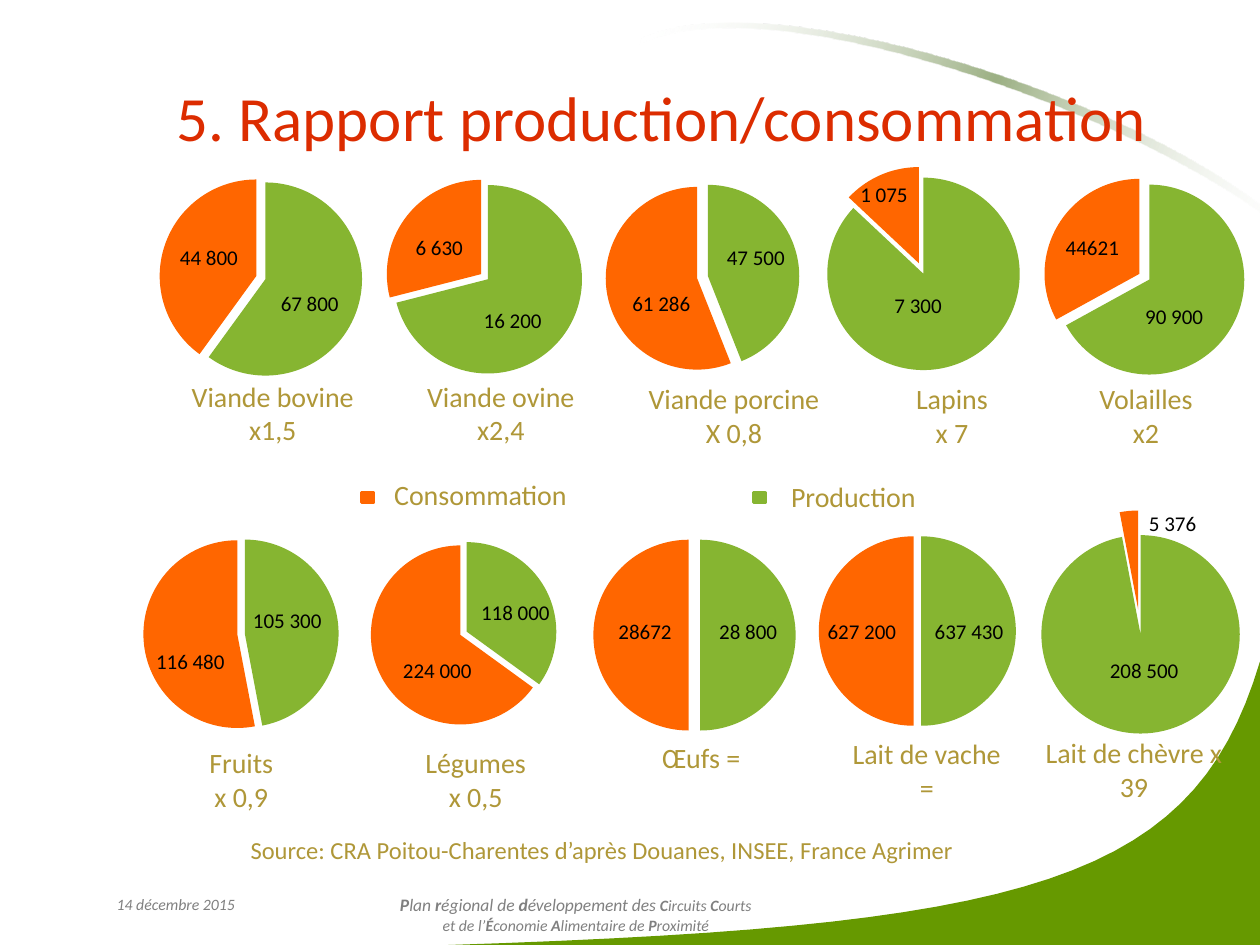
import pptx
import pptx.chart.data
import pptx.dml.color
import pptx.enum.chart
import pptx.enum.shapes
import pptx.enum.text
import pptx.oxml
import pptx.oxml.ns
import pptx.util
from pptx.util import Inches
from dataclasses import dataclass


@dataclass(frozen=True)
class Theme:
    font: str = "Calibri"
    title: str = "DC2C00"
    caption: str = "AF9738"
    value: str = "000000"
    footer: str = "808080"
    production: str = "86B531"
    consumption: str = "FF6600"
    corner: str = "669900"
    swoosh: str = "9CB084"
    title_size: int = 36
    caption_size: int = 16
    source_size: int = 14
    value_size: int = 12
    footer_size: int = 10
    small_size: int = 9


theme = Theme()
color = pptx.dml.color.RGBColor.from_string
CENTER = pptx.enum.text.PP_ALIGN.CENTER
LEFT = pptx.enum.text.PP_ALIGN.LEFT
NAMESPACES = pptx.oxml.ns.nsdecls("a", "c")

deck = pptx.Presentation()
deck.slide_width, deck.slide_height = Inches(10), Inches(7.5)
page = deck.slides.add_slide(deck.slide_layouts[5])
shapes = page.shapes


def write(text, at=None, box=None, size=theme.caption_size, ink=theme.caption, align=LEFT, italic=False):
    if box is None:
        box = shapes.add_textbox(*[Inches(length) for length in at])
    frame = box.text_frame
    frame.word_wrap = True
    for number, line in enumerate(text.split("\n")):
        para = frame.paragraphs[0] if number == 0 else frame.add_paragraph()
        para.alignment = align
        for position, words in enumerate(line.split("|")):
            if words:
                span = para.add_run()
                span.text = words
                span.font.name = theme.font
                span.font.size = pptx.util.Pt(size)
                span.font.color.rgb = color(ink)
                span.font.italic = italic
                span.font.bold = position % 2 == 1
    return box


def curve(start, first, second, end, steps=30):
    points = []
    for step in range(steps + 1):
        t = step / steps
        weights = ((1 - t) ** 3, 3 * t * (1 - t) ** 2, 3 * t * t * (1 - t), t ** 3)
        points.append(tuple(Inches(sum(weight * point[axis] for weight, point in zip(weights, (start, first, second, end))))
                            for axis in (0, 1)))
    return points


corner_edge = curve((3.56, 7.5), (8.2, 7.35), (9.48, 7), (10, 5.25))
upper_edge = curve((5.1, 0.3), (6.2, -0.2), (9.48, 0.93), (10.36, 1.95))
lower_edge = curve((10.35, 1.97), (9.46, 1.07), (6.18, -0.19), (5.08, 0.35))
outlines = []
for points in (corner_edge + [(Inches(10), Inches(7.5))], upper_edge + lower_edge):
    builder = shapes.build_freeform(*points[0], scale=1.0)
    builder.add_line_segments(points[1:], close=True)
    outline = builder.convert_to_shape()
    outline.shadow.inherit = False
    outline.line.fill.background()
    outline.fill.solid()
    outline.fill.fore_color.rgb = color(theme.corner)
    outlines.append(outline)

swoosh = outlines[1].element.spPr
gradient = pptx.oxml.parse_xml(
    f'<a:gradFill {NAMESPACES} rotWithShape="1"><a:gsLst>'
    '<a:gs pos="0"><a:srgbClr val="FFFFFF"><a:alpha val="0"/></a:srgbClr></a:gs>'
    f'<a:gs pos="50000"><a:srgbClr val="{theme.swoosh}"/></a:gs>'
    '<a:gs pos="100000"><a:srgbClr val="FFFFFF"><a:alpha val="0"/></a:srgbClr></a:gs>'
    '</a:gsLst><a:lin ang="1308000" scaled="0"/></a:gradFill>')
swoosh.replace(swoosh.find(pptx.oxml.ns.qn("a:solidFill")), gradient)

write("14 décembre 2015", at=(0.78, 7.05, 1.23, 0.4), size=theme.small_size, ink=theme.footer, align=CENTER, italic=True)
footer = write("|P|lan |r|égional de |d|éveloppement des |C|ircuits |C|ourts\n"
               "et de l’|É|conomie |A|limentaire de |P|roximité",
               at=(2.17, 7.05, 4.8, 0.4), size=theme.footer_size, ink=theme.footer, align=CENTER, italic=True)
first_line, second_line = footer.text_frame.paragraphs
for span in list(first_line.runs[6:]) + list(second_line.runs):
    span.font.size = pptx.util.Pt(theme.small_size)

title = shapes.title
title.left, title.top, title.width, title.height = [Inches(length) for length in (1.3, 0.3, 8.45, 1.25)]
write("5. Rapport production/consommation", box=title, size=theme.title_size, ink=theme.title)
title.text_frame.vertical_anchor = pptx.enum.text.MSO_ANCHOR.MIDDLE
title.element.getparent().append(title.element)

pies = [
    ((1.18, 1.39, 1.89, 1.65), (0.034, 0.005, 0.875, 0.976), 60, 5, None),
    ((3.07, 1.39, 1.72, 1.66), (0, 0.018, 0.87, 0.911), 71, None, 9),
    ((4.76, 1.32, 1.73, 1.65), (0.001, 0.068, 0.942, 0.932), 44, 6, None),
    ((8.11, 1.34, 1.85, 1.81), (0.094, 0.031, 0.864, 0.885), 67, 6, None),
    ((6.44, 1.22, 1.75, 1.76), (0.051, 0.059, 0.873, 0.871), 87, None, 12),
    ((4.32, 4.16, 2.28, 1.79), (0.167, 0.044, 0.712, 0.897), 50, 6, None),
    ((6.31, 3.95, 2.13, 2.07), (0.072, 0.134, 0.768, 0.756), 50, 4, None),
    ((7.8, 3.91, 2.36, 2.11), (0.108, 0.067, 0.846, 0.933), 97, 25, 0),
    ((2.74, 4.14, 1.83, 1.8), (0.11, 0.105, 0.78, 0.79), 35, None, 8),
    ((0.9, 4.06, 2.29, 1.81), (0.104, 0.099, 0.677, 0.875), 47, 4, None),
]
for at, plot_area, production, series_gap, production_gap in pies:
    data = pptx.chart.data.CategoryChartData()
    data.categories = ["1", "2"]
    data.add_series("Series 1", (production, 100 - production))
    chart = shapes.add_chart(pptx.enum.chart.XL_CHART_TYPE.PIE, *[Inches(length) for length in at], data).chart
    chart.has_legend = False
    chart.has_title = False
    chart.font.name = theme.font
    chart.font.size = pptx.util.Pt(theme.footer_size)
    chart.font.color.rgb = color(theme.value)
    plot = chart.plots[0]
    plot.vary_by_categories = True
    for number, ink in enumerate((theme.production, theme.consumption)):
        point = plot.series[0].points[number]
        point.format.fill.solid()
        point.format.fill.fore_color.rgb = color(ink)
        point.format.line.fill.background()
    area = chart.element.xpath(".//c:plotArea")[0]
    for layout in area.xpath("./c:layout"):
        area.remove(layout)
    sides = "".join(f'<c:{side} val="{part}"/>' for side, part in zip("xywh", plot_area))
    area.insert(0, pptx.oxml.parse_xml(
        f'<c:layout {NAMESPACES}><c:manualLayout><c:layoutTarget val="inner"/>'
        f'<c:xMode val="edge"/><c:yMode val="edge"/>{sides}</c:manualLayout></c:layout>'))
    for gap, follower in ((series_gap, ".//c:ser/c:dPt"), (production_gap, ".//c:dPt/c:spPr")):
        if gap is not None:
            explosion = pptx.oxml.parse_xml(f'<c:explosion {NAMESPACES} val="{gap}"/>')
            area.xpath(follower)[0].addprevious(explosion)

captions = [
    ("Viande bovine x1,5", 1.26, 2.96), ("Viande ovine\nx2,4", 3.07, 2.96),
    ("Viande porcine\nX 0,8", 4.92, 2.98), ("Lapins\nx 7", 6.65, 2.98), ("Volailles\nx2", 8.19, 2.98),
    ("Fruits\nx 0,9", 1.01, 5.87), ("Légumes\nx 0,5", 2.87, 5.87), ("Œufs =", 4.66, 5.83),
    ("Lait de vache\n=", 6.45, 5.8), ("Lait de chèvre x 39", 8.18, 5.79),
]
for text, left, top in captions:
    width = 1.64 if "chèvre" in text else 1.81
    height = 0.37 if "Œufs" in text else 0.64
    write(text, at=(left, top, width, height), align=CENTER)

values = [
    ("44 800", 1.33, 1.89), ("67 800", 2.13, 2.26), ("16 200", 3.74, 2.39), ("6 630", 3.2, 1.81),
    ("47 500", 5.67, 1.89), ("61 286", 4.92, 2.26), ("7 300", 7, 2.27), ("1 075", 6.73, 1.39),
    ("44621", 8.36, 1.81), ("90 900", 8.99, 2.36), ("224 000", 3.1, 5.17), ("118 000", 3.72, 4.71),
    ("116 480", 1.14, 5.1), ("105 300", 1.91, 4.77), ("28672", 4.81, 4.86), ("28 800", 5.61, 4.86),
    ("5 376", 9.02, 4), ("208 500", 8.71, 5.17), ("637 430", 7.32, 4.86), ("627 200", 6.47, 4.86),
]
for text, left, top in values:
    width = 0.86 if len(text) == 7 else 0.71
    write(text, at=(left, top, width, 0.3), size=theme.value_size, ink=theme.value)

legend = [("Consommation", theme.consumption, 2.87, 3.03, 3.74), ("Production", theme.production, 5.98, 6.18, 3.76)]
for text, ink, key_left, text_left, text_top in legend:
    key = shapes.add_shape(pptx.enum.shapes.MSO_SHAPE.RECTANGLE, Inches(key_left), Inches(3.91), Inches(0.09), Inches(0.08))
    key.shadow.inherit = False
    key.fill.solid()
    key.fill.fore_color.rgb = color(ink)
    key.line.color.rgb = color(ink)
    key.line.width = pptx.util.Pt(2)
    write(text, at=(text_left, text_top, 1.81, 0.37))

write("Source: CRA Poitou-Charentes d’après Douanes, INSEE, France Agrimer",
      at=(1.89, 6.58, 7.72, 0.34), size=theme.source_size)

deck.save("out.pptx")
